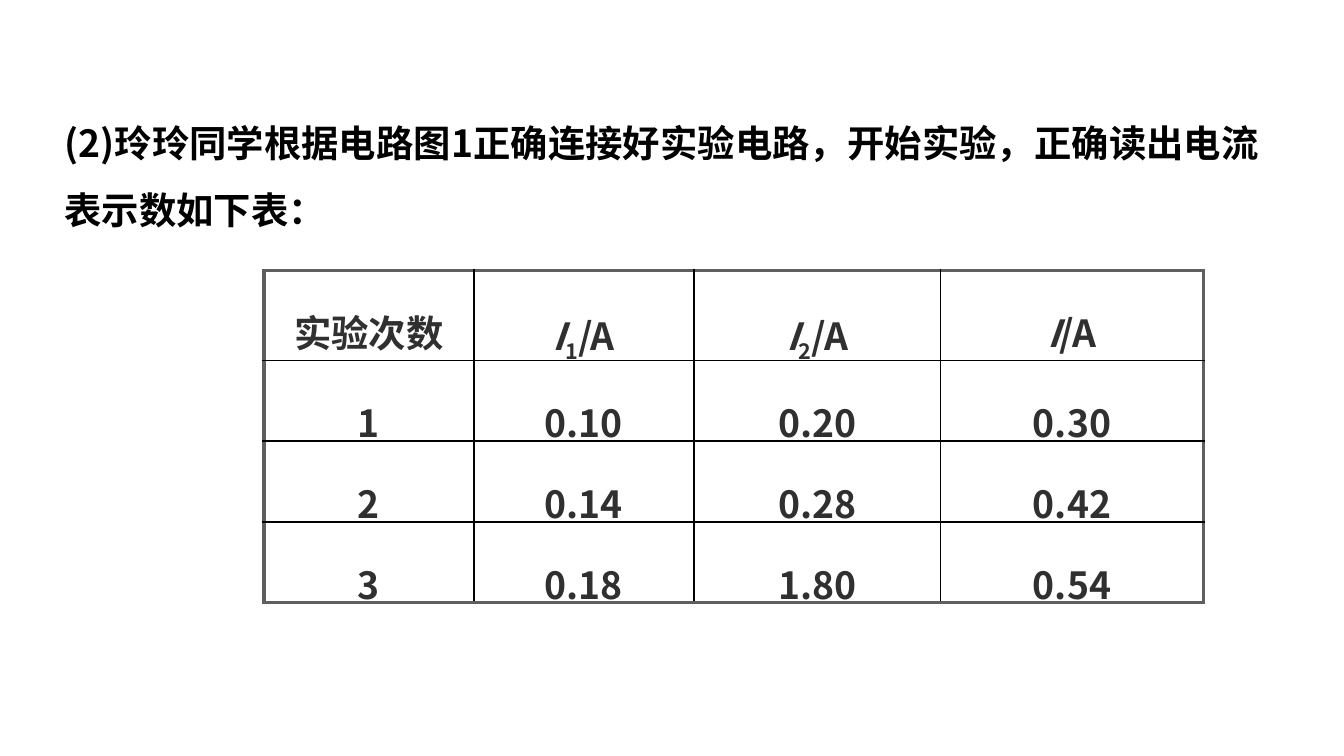
import pptx
import pptx.dml.color
import pptx.enum.text
import pptx.oxml
import pptx.oxml.ns
import pptx.util
from lxml import etree

QUESTION = "(2)玲玲同学根据电路图1正确连接好实验电路，开始实验，正确读出电流表示数如下表："
# A cell is a list of (text, style) runs.
HEADER = [
    [("实验次数", "")],
    [("I", "italic"), ("1", "sub"), ("/A", "")],
    [("I", "italic"), ("2", "sub"), ("/A", "")],
    [("I", "italic"), ("/A", "")],
]
READINGS = [
    ["1", "0.10", "0.20", "0.30"],
    ["2", "0.14", "0.28", "0.42"],
    ["3", "0.18", "1.80", "0.54"],
]


def color(value):
    return pptx.dml.color.RGBColor.from_string(value)


class SlideBuilder:
    """Draws on one slide; lengths are in grid units, 100 columns to the width."""

    FONT = "Noto Sans CJK SC"
    SIZE = 20
    LINE_SPACING = 1.5
    TITLE_COLOR = "000000"
    CELL_COLOR = "303030"
    INNER_BORDER = ("000000", 1)
    OUTER_BORDER = ("5F5F5F", 2.25)

    def __init__(self, prs):
        self.unit = prs.slide_width / 100
        self.s = prs.slides.add_slide(prs.slide_layouts[6])

    def grid(self, *units):
        return [pptx.util.Emu(round(u * self.unit)) for u in units]

    def add_run(self, p, text, hex_color, style=""):
        r = p.add_run()
        r.text = text
        r.font.size = pptx.util.Pt(self.SIZE)
        r.font.bold = True
        r.font.italic = style == "italic"
        r.font.color.rgb = color(hex_color)
        r.font.name = self.FONT
        rPr = r._r.get_or_add_rPr()
        if style == "sub":
            rPr.set("baseline", "-25000")
        etree.SubElement(rPr, pptx.oxml.ns.qn("a:ea"), typeface=self.FONT)

    def text(self, text, left, top, width, height):
        sp = self.s.shapes.add_textbox(*self.grid(left, top, width, height))
        tf = sp.text_frame
        tf.word_wrap = True
        tf.auto_size = pptx.enum.text.MSO_AUTO_SIZE.SHAPE_TO_FIT_TEXT
        p = tf.paragraphs[0]
        p.line_spacing = self.LINE_SPACING
        self.add_run(p, text, self.TITLE_COLOR)

    def border(self, cell, side, hex_color, width):
        tcPr = cell._tc.get_or_add_tcPr()
        tcPr.append(pptx.oxml.parse_xml(
            f'<a:ln{side} {pptx.oxml.ns.nsdecls("a")} w="{pptx.util.Pt(width)}">'
            f'<a:solidFill><a:srgbClr val="{hex_color}"/></a:solidFill>'
            f'</a:ln{side}>'))

    def cell(self, cell, runs, outer_sides):
        cell.vertical_anchor = pptx.enum.text.MSO_ANCHOR.MIDDLE
        cell.margin_left, cell.margin_right = self.grid(0.7, 0.7)
        cell.margin_top, cell.margin_bottom = self.grid(0.5, 0.5)
        for side in "LRTB":
            style = self.OUTER_BORDER if side in outer_sides else self.INNER_BORDER
            self.border(cell, side, *style)
        cell.fill.background()
        p = cell.text_frame.paragraphs[0]
        p.alignment = pptx.enum.text.PP_ALIGN.CENTER
        p.line_spacing = self.LINE_SPACING
        for text, style in runs:
            self.add_run(p, text, self.CELL_COLOR, style)

    def table(self, rows, left, top, col_widths, row_height):
        n_rows, n_cols = len(rows), len(col_widths)
        box = self.grid(left, top, sum(col_widths), n_rows * row_height)
        table = self.s.shapes.add_table(n_rows, n_cols, *box).table
        table.first_row = table.horz_banding = False
        for column, width in zip(table.columns, self.grid(*col_widths)):
            column.width = width
        for i, row in enumerate(rows):
            table.rows[i].height = self.grid(row_height)[0]
            for j, runs in enumerate(row):
                edges = {"L": j == 0, "R": j == n_cols - 1,
                         "T": i == 0, "B": i == n_rows - 1}
                outer = [side for side, on_edge in edges.items() if on_edge]
                self.cell(table.cell(i, j), runs, outer)


def main():
    prs = pptx.Presentation()
    prs.slide_width = pptx.util.Inches(10)
    prs.slide_height = prs.slide_width * 9 // 16
    slide = SlideBuilder(prs)
    slide.text(QUESTION, 3.8, 6.8, 91.8, 10.3)
    readings = [[[(value, "")] for value in row] for row in READINGS]
    slide.table([HEADER] + readings, 19.65, 20.13, [15.6, 16.4, 18.35, 19.55], 6)
    prs.save("out.pptx")


if __name__ == "__main__":
    main()
